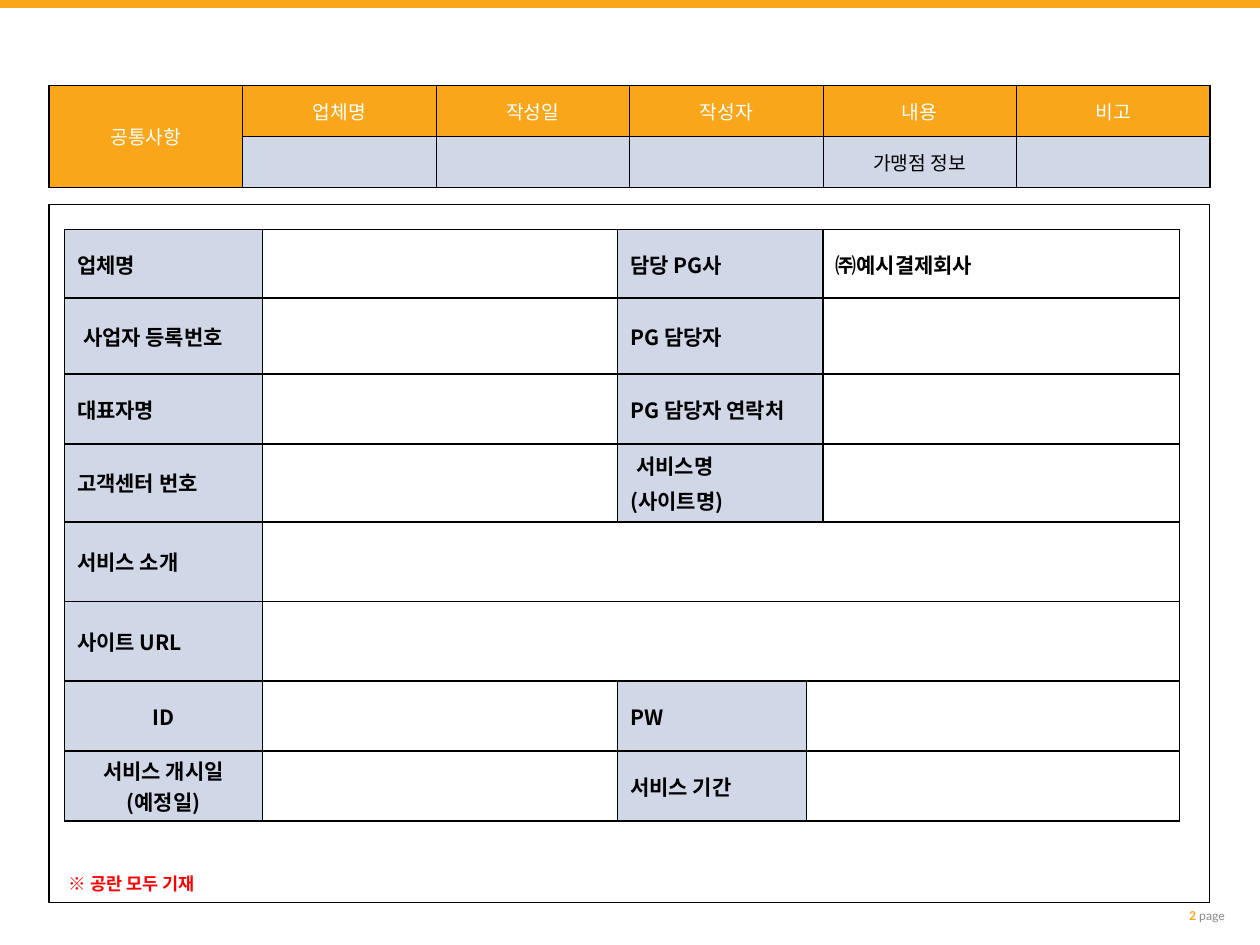
from lxml import etree
from pptx import Presentation
from pptx.dml.color import RGBColor
from pptx.enum.shapes import MSO_SHAPE
from pptx.enum.text import MSO_ANCHOR, PP_ALIGN
from pptx.oxml.ns import qn
from pptx.util import Cm, Pt

LEFT, CENTER, RIGHT = PP_ALIGN.LEFT, PP_ALIGN.CENTER, PP_ALIGN.RIGHT
MIDDLE = MSO_ANCHOR.MIDDLE
RECTANGLE = MSO_SHAPE.RECTANGLE
ORANGE, PALE, BLACK, WHITE = "FAA61A", "D0D8E8", "000000", "FFFFFF"
KOREAN = "Noto Sans CJK KR"


def style(target, color, size=None, name=None, bold=None):
    if size is None:
        target.fill.solid()
        target.fill.fore_color.rgb = RGBColor.from_string(color)
        return
    target.font.size = Pt(size)
    target.font.bold = bold
    target.font.name = name
    target.font.color.rgb = RGBColor.from_string(color)
    if name != "Lato":
        properties = target._p.get_or_add_pPr().find(qn("a:defRPr"))
        etree.SubElement(properties, qn("a:ea"), typeface=KOREAN)


def set_borders(cell, widths):
    properties = cell._tc.get_or_add_tcPr()
    for index, (side, width) in enumerate(zip("LRTB", widths)):
        line = etree.Element(qn(f"a:ln{side}"), w=str(Pt(width)))
        fill = etree.SubElement(line, qn("a:solidFill"))
        etree.SubElement(fill, qn("a:srgbClr"), val=BLACK)
        properties.insert(index, line)


deck = Presentation()
deck.slide_width, deck.slide_height = Cm(25.4), Cm(19.05)
slide = deck.slides.add_slide(deck.slide_layouts[6])
shapes = slide.shapes

bar = shapes.add_shape(RECTANGLE, 0, 0, Cm(25.4), Cm(0.16))
bar.shadow.inherit = False
style(bar, ORANGE)
bar.line.fill.background()

page_box = shapes.add_textbox(Cm(22.07), Cm(18.16), Cm(2.62), Cm(0.58))
frame = page_box.text_frame
frame.word_wrap = True
frame.vertical_anchor = MIDDLE
frame.margin_left = frame.margin_right = frame.margin_top = frame.margin_bottom = 0
para = frame.paragraphs[0]
para.alignment = RIGHT
for text, color, bold in [("2 ", ORANGE, True), ("page", "898989", False)]:
    span = para.add_run()
    span.text = text
    style(span, color, 7, "Lato", bold)

form_widths = [3.99, 7.16, 3.81, 0.33, 7.19]
form_heights = [1.38, 1.53, 1.41, 1.57, 1.61, 1.6, 1.41, 1.41]
form_rows = [
    ("업체명", "담당 PG사", "㈜예시결제회사"),
    ("사업자 등록번호", "PG 담당자", ""),
    ("대표자명", "PG 담당자 연락처", ""),
    ("고객센터 번호", "서비스명\n(사이트명)", ""),
    ("서비스 소개", "", ""),
    ("사이트 URL", "", ""),
    ("ID", "PW", ""),
    ("서비스 개시일\v(예정일)", "서비스 기간", ""),
]
indented = ("사업자 등록번호", "서비스명")
form = shapes.add_table(8, 5, Cm(1.3), Cm(4.63), Cm(22.48), Cm(11.92)).table
form.first_row = form.horz_banding = False
for column, width in zip(form.columns, form_widths):
    column.width = Cm(width)
for row, (height, labels) in enumerate(zip(form_heights, form_rows)):
    form.rows[row].height = Cm(height)
    left_label, right_label, value = labels
    texts = [left_label, "", right_label, "", value]
    for col, text in enumerate(texts):
        cell = form.cell(row, col)
        cell.text_frame.text = text
        cell.vertical_anchor = MIDDLE
        cell.margin_top = cell.margin_bottom = 0
        for index, para in enumerate(cell.text_frame.paragraphs):
            para.alignment = CENTER if col == 0 and row >= 6 else LEFT
            if index:
                para.space_before = Pt(2.4)
            if para.text in indented:
                para._p.get_or_add_pPr().set("marL", str(Cm(0.12)))
            style(para, BLACK, 12, KOREAN, True)
        if col in (0, 2) and text:
            style(cell, PALE)
        else:
            cell.fill.background()
        set_borders(cell, [1, 1, 1, 1])
    first, last = (2, 3) if row < 4 else (1, 4) if row < 6 else (3, 4)
    form.cell(row, first).merge(form.cell(row, last))

outline = shapes.add_shape(RECTANGLE, Cm(0.99), Cm(4.12), Cm(23.4), Cm(14.07))
outline.shadow.inherit = False
outline.fill.background()
outline.line.color.rgb = RGBColor.from_string(BLACK)
outline.line.width = Pt(0.75)

note = shapes.add_textbox(Cm(1.14), Cm(17.48), Cm(21.59), Cm(0.69))
note.text_frame.word_wrap = True
para = note.text_frame.paragraphs[0]
para.text = "※ 공란 모두 기재"
style(para, "FF0000", 10, KOREAN, True)

header_rows = [
    ["공통사항", "업체명", "작성일", "작성자", "내용", "비고"],
    ["", "", "", "", "가맹점 정보", ""],
]
header = shapes.add_table(2, 6, Cm(0.99), Cm(1.72), Cm(23.4), Cm(2.06)).table
header.first_row = header.horz_banding = False
for column in header.columns:
    column.width = Cm(3.9)
for row, texts in enumerate(header_rows):
    header.rows[row].height = Cm(1.03)
    for col, text in enumerate(texts):
        cell = header.cell(row, col)
        cell.vertical_anchor = MIDDLE
        para = cell.text_frame.paragraphs[0]
        para.text = text
        para.alignment = CENTER
        style(para, BLACK if row else WHITE, 11, "Arial")
        style(cell, PALE if row and col else ORANGE)
        outer = [col == 0, col == 5, row == 0, row == 1]
        set_borders(cell, [1 if edge else 0.5 for edge in outer])
header.cell(0, 0).merge(header.cell(1, 0))

deck.save("out.pptx")
